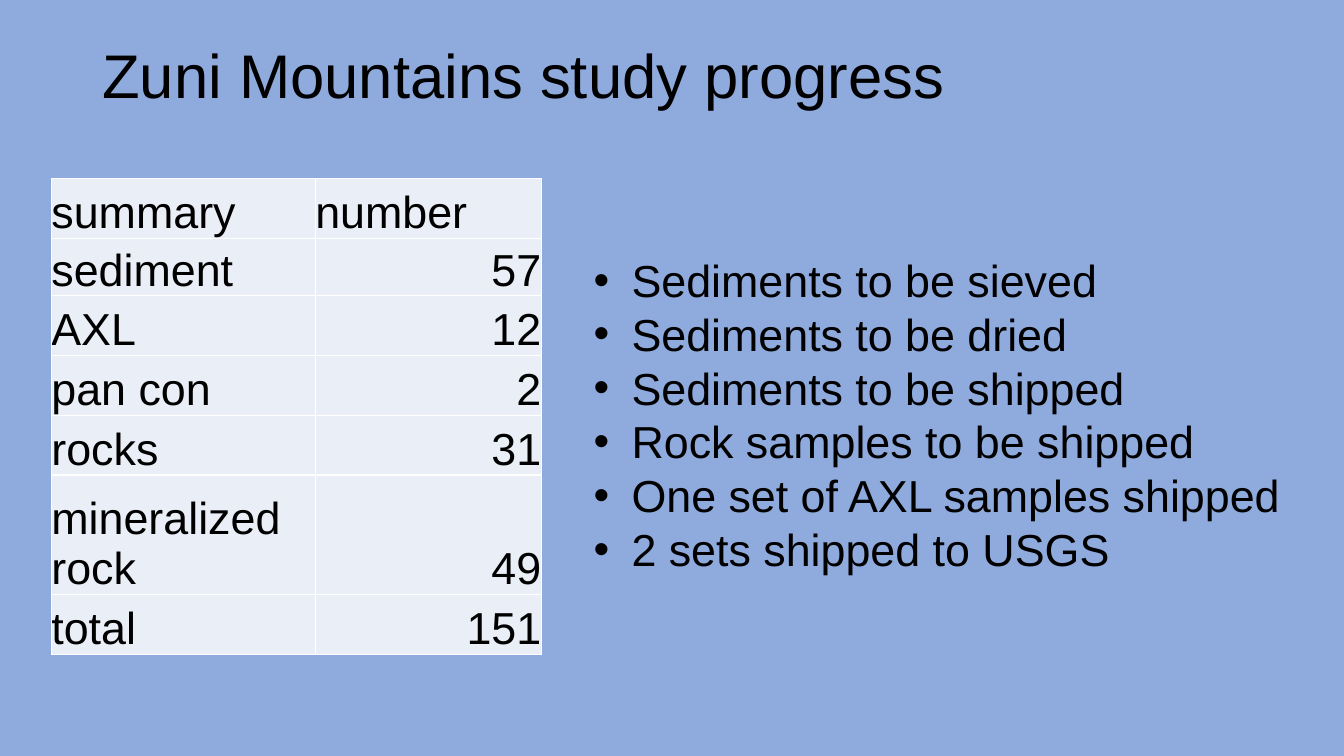
from dataclasses import dataclass

from lxml import etree
from pptx import Presentation
from pptx.dml.color import RGBColor
from pptx.enum.text import MSO_ANCHOR, MSO_AUTO_SIZE, PP_ALIGN
from pptx.oxml.ns import qn
from pptx.slide import Slide
from pptx.table import _Cell
from pptx.text.text import _Paragraph
from pptx.util import Pt

LEFT, RIGHT = PP_ALIGN.LEFT, PP_ALIGN.RIGHT
TOP, BOTTOM = MSO_ANCHOR.TOP, MSO_ANCHOR.BOTTOM
GROW = MSO_AUTO_SIZE.SHAPE_TO_FIT_TEXT

COLORS = {"background": "8FAADC", "text": "000000", "cell": "EAEFF7", "border": "FFFFFF"}
FONT = "Arial"
TITLE_SIZE, BODY_SIZE = 44, 32
BULLET_INDENT = 27
COLUMN_WIDTHS = (188.5, 161.5)
CELL_FORMAT = {
    "vertical_anchor": BOTTOM,
    "margin_left": 0,
    "margin_top": 0,
    "margin_right": 0,
    "margin_bottom": 0,
}


@dataclass(frozen=True)
class SampleRow:
    label: str
    number: str
    height: float = 42.7
    number_align: PP_ALIGN = RIGHT


@dataclass(frozen=True)
class TextArea:
    lines: tuple[str, ...]
    left: float
    top: float
    width: float
    height: float
    size: float
    frame_format: dict
    line_spacing: float = 1.0
    bulleted: bool = False


SAMPLE_ROWS = (
    SampleRow("summary", "number", number_align=LEFT),
    SampleRow("sediment", "57", height=41),
    SampleRow("AXL", "12"),
    SampleRow("pan con", "2"),
    SampleRow("rocks", "31"),
    SampleRow("mineralized rock", "49", height=85.4),
    SampleRow("total", "151"),
)

TEXT_AREAS = (
    TextArea(
        ("Zuni Mountains study progress",),
        66, 28.75, 828, 104.4, TITLE_SIZE,
        {"word_wrap": True, "vertical_anchor": TOP},
        line_spacing=0.9,
    ),
    TextArea(
        (
            "Sediments to be sieved",
            "Sediments to be dried",
            "Sediments to be shipped",
            "Rock samples to be shipped",
            "One set of AXL samples shipped",
            "2 sets shipped to USGS",
        ),
        417, 177, 510, 278.6, BODY_SIZE,
        {"word_wrap": False, "vertical_anchor": TOP, "auto_size": GROW},
        bulleted=True,
    ),
)


def apply_format(target: object, values: dict) -> None:
    for attribute, value in values.items():
        setattr(target, attribute, value)


def write_line(paragraph: _Paragraph, text: str, size: float, align: PP_ALIGN = LEFT) -> None:
    paragraph.alignment = align
    run = paragraph.add_run()
    run.text = text
    apply_format(run.font, {"name": FONT, "size": Pt(size), "bold": False})
    run.font.color.rgb = RGBColor.from_string(COLORS["text"])


def add_bullet(paragraph: _Paragraph) -> None:
    properties = paragraph._p.get_or_add_pPr()
    properties.set("marL", str(Pt(BULLET_INDENT)))
    properties.set("indent", str(-Pt(BULLET_INDENT)))
    etree.SubElement(properties, qn("a:buFont"), typeface=FONT)
    etree.SubElement(properties, qn("a:buChar"), char="•")


def add_text_area(slide: Slide, area: TextArea) -> None:
    box = slide.shapes.add_textbox(Pt(area.left), Pt(area.top), Pt(area.width), Pt(area.height))
    frame = box.text_frame
    apply_format(frame, area.frame_format)
    for index, line in enumerate(area.lines):
        paragraph = frame.add_paragraph() if index else frame.paragraphs[0]
        paragraph.line_spacing = area.line_spacing
        write_line(paragraph, line, area.size)
        if area.bulleted:
            add_bullet(paragraph)


def add_borders(cell: _Cell) -> None:
    properties = cell._tc.get_or_add_tcPr()
    for side in ("a:lnL", "a:lnR", "a:lnT", "a:lnB"):
        border = etree.SubElement(properties, qn(side), w=str(Pt(1)))
        fill = etree.SubElement(border, qn("a:solidFill"))
        etree.SubElement(fill, qn("a:srgbClr"), val=COLORS["border"])


def fill_cell(cell: _Cell, text: str, align: PP_ALIGN) -> None:
    apply_format(cell, CELL_FORMAT)
    add_borders(cell)
    cell.fill.solid()
    cell.fill.fore_color.rgb = RGBColor.from_string(COLORS["cell"])
    write_line(cell.text_frame.paragraphs[0], text, BODY_SIZE, align)


def add_sample_table(slide: Slide, rows: tuple[SampleRow, ...]) -> None:
    height = sum(row.height for row in rows)
    table = slide.shapes.add_table(
        len(rows), len(COLUMN_WIDTHS), Pt(36.7), Pt(127.5), Pt(sum(COLUMN_WIDTHS)), Pt(height)
    ).table
    apply_format(table, {"first_row": False, "horz_banding": False})
    for column, width in zip(table.columns, COLUMN_WIDTHS):
        column.width = Pt(width)
    for index, row in enumerate(rows):
        table.rows[index].height = Pt(row.height)
        fill_cell(table.cell(index, 0), row.label, LEFT)
        fill_cell(table.cell(index, 1), row.number, row.number_align)


def main() -> None:
    presentation = Presentation()
    apply_format(presentation, {"slide_width": Pt(960), "slide_height": Pt(540)})
    slide = presentation.slides.add_slide(presentation.slide_layouts[6])
    background = slide.background.fill
    background.solid()
    background.fore_color.rgb = RGBColor.from_string(COLORS["background"])
    for area in TEXT_AREAS:
        add_text_area(slide, area)
    add_sample_table(slide, SAMPLE_ROWS)
    presentation.save("out.pptx")


if __name__ == "__main__":
    main()
